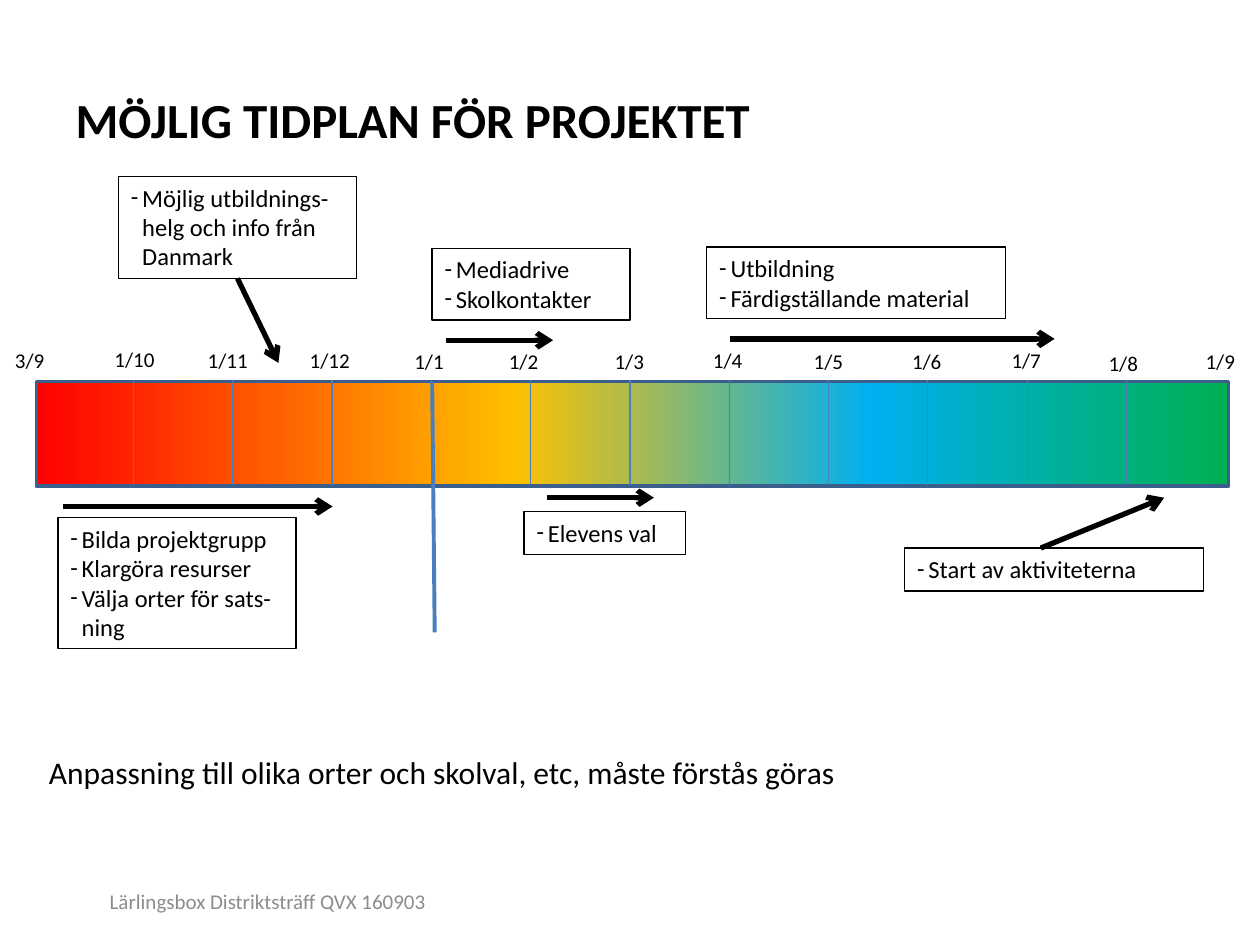
"""Build a one-slide project timeline with month marks, task boxes and arrows."""
import pptx
import pptx.dml.color
import pptx.enum.shapes
import pptx.enum.text
import pptx.oxml
import pptx.oxml.ns
import pptx.util
from dataclasses import dataclass

Inches = pptx.util.Inches
Pt = pptx.util.Pt
RGB = pptx.dml.color.RGBColor.from_string
Align = pptx.enum.text.PP_ALIGN
Anchor = pptx.enum.text.MSO_ANCHOR
NS = pptx.oxml.ns.nsdecls("a")


@dataclass(frozen=True)
class Theme:
    font: str = "Calibri"
    ink: str = "000000"
    grey: str = "8C8C8C"
    edge: str = "3A5F8C"
    mark: str = "4B7EBC"
    ramp: tuple = ((0, "FF0000"), (40, "FFC000"), (70, "00B0F0"), (100, "00B050"))
    title: int = 28
    note: int = 18
    task: int = 14
    small: int = 12


theme = Theme()
deck = pptx.Presentation()
deck.slide_width, deck.slide_height = Inches(10), Inches(7.5)
slide = deck.slides.add_slide(deck.slide_layouts[5])
shapes = slide.shapes


def add_text(place, lines, size, color=theme.ink, wrap=True):
    box = shapes.add_textbox(*map(Inches, place))
    frame = box.text_frame
    frame.word_wrap = wrap
    frame.text = "\n".join(lines)
    for para in frame.paragraphs:
        para.font.name = theme.font
        para.font.size = Pt(size)
        para.font.color.rgb = RGB(color)
    return box


def add_line(start, end, color, width, arrow=False):
    kind = pptx.enum.shapes.MSO_CONNECTOR.STRAIGHT
    line = shapes.add_connector(kind, *map(Inches, start + end))
    line.line.color.rgb = RGB(color)
    line.line.width = Pt(width)
    props = line._element.spPr
    if arrow:
        tail = pptx.oxml.parse_xml(f'<a:tailEnd {NS} type="arrow"/>')
        line.line._get_or_add_ln().append(tail)
    props.append(pptx.oxml.parse_xml(f"<a:effectLst {NS}/>"))
    return line


title = shapes.title
title.left, title.top = Inches(0.5), Inches(0.58)
title.width, title.height = Inches(9), Inches(0.73)
title.text_frame.text = "MÖJLIG TIDPLAN FÖR PROJEKTET"
title.text_frame.vertical_anchor = Anchor.MIDDLE
head = title.text_frame.paragraphs[0]
head.alignment = Align.LEFT
head.font.name = theme.font
head.font.size = Pt(theme.title)
head.font.bold = True
head.font.color.rgb = RGB(theme.ink)

rect = pptx.enum.shapes.MSO_SHAPE.RECTANGLE
bar = shapes.add_shape(rect, Inches(0.29), Inches(3.03), Inches(9.46), Inches(0.83))
bar.shadow.inherit = False
bar.line.color.rgb = RGB(theme.edge)
bar.line.width = Pt(2)
bar.fill.gradient()
bar.fill.gradient_angle = 0
stops = bar._element.spPr.find(".//" + pptx.oxml.ns.qn("a:gsLst"))
for stop in list(stops):
    stops.remove(stop)
for share, color in theme.ramp:
    stops.append(pptx.oxml.parse_xml(
        f'<a:gs {NS} pos="{share * 1000}"><a:srgbClr val="{color}"/></a:gs>'))

first, last, count = 1.06, 8.94, 11
for index in range(count):
    x = first + (last - first) * index / (count - 1)
    add_line((x, 3.02), (x, 3.85), theme.mark, 0.75)
add_line((3.43, 3.03), (3.45, 5.02), theme.mark, 2.25)

dates = [
    ("3/9", 0.02, 2.71), ("1/10", 0.81, 2.7), ("1/11", 1.55, 2.71),
    ("1/12", 2.36, 2.71), ("1/1", 3.19, 2.72), ("1/2", 3.94, 2.72),
    ("1/3", 4.78, 2.72), ("1/4", 5.56, 2.71), ("1/5", 6.36, 2.72),
    ("1/6", 7.14, 2.72), ("1/7", 7.93, 2.71), ("1/8", 8.7, 2.73),
    ("1/9", 9.47, 2.72),
]
for date, left, top in dates:
    width = 0.52 if len(date) > 3 else 0.44
    add_text((left, top, width, 0.3), [date], theme.small, wrap=False)

tasks = [
    ((0.46, 4.11, 1.89, 1.04),
     ["Bilda projektgrupp", "Klargöra resurser", "Välja orter för sats-ning"]),
    ((0.94, 1.4, 1.89, 0.81), ["Möjlig utbildnings-helg och info från Danmark"]),
    ((3.43, 1.97, 1.57, 0.57), ["Mediadrive", "Skolkontakter"]),
    ((4.16, 4.06, 1.28, 0.34), ["Elevens val"]),
    ((5.61, 1.96, 2.37, 0.57), ["Utbildning", "Färdigställande material"]),
    ((7.18, 4.35, 2.37, 0.34), ["Start av aktiviteterna"]),
]
boxes = []
for place, lines in tasks:
    box = add_text(place, lines, theme.task)
    box.line.color.rgb = RGB(theme.ink)
    box.line.width = Pt(0.75)
    for para in box.text_frame.paragraphs:
        props = para._p.get_or_add_pPr()
        props.set("marL", str(Inches(0.09)))
        props.set("indent", str(-Inches(0.09)))
        for mark in (f'buFont {NS} typeface="{theme.font}"', f'buChar {NS} char="-"'):
            bullet = pptx.oxml.parse_xml(f"<a:{mark}/>")
            props.insert_element_before(bullet, "a:tabLst", "a:defRPr", "a:extLst")
    boxes.append(box)

spans = [
    ((0.5, 4.02), (2.64, 4.02)),
    ((3.54, 2.7), (4.39, 2.7)),
    ((4.34, 3.95), (5.19, 3.95)),
    ((5.79, 2.69), (8.37, 2.69)),
    ((8.26, 4.35), (9.24, 3.95)),
]
for start, end in spans:
    add_line(start, end, theme.ink, 3, arrow=True)
course = add_line((1.89, 2.21), (2.21, 2.88), theme.ink, 3, arrow=True)
course.begin_connect(boxes[1], 2)

add_text((0.29, 5.93, 6.51, 0.4),
         ["Anpassning till olika orter och skolval, etc, måste förstås göras"],
         theme.note, wrap=False)
foot = add_text((0.54, 6.95, 3.17, 0.4), ["Lärlingsbox Distriktsträff QVX 160903"],
                theme.small, theme.grey)
foot.text_frame.vertical_anchor = Anchor.MIDDLE
foot.text_frame.paragraphs[0].alignment = Align.CENTER

deck.save("out.pptx")
